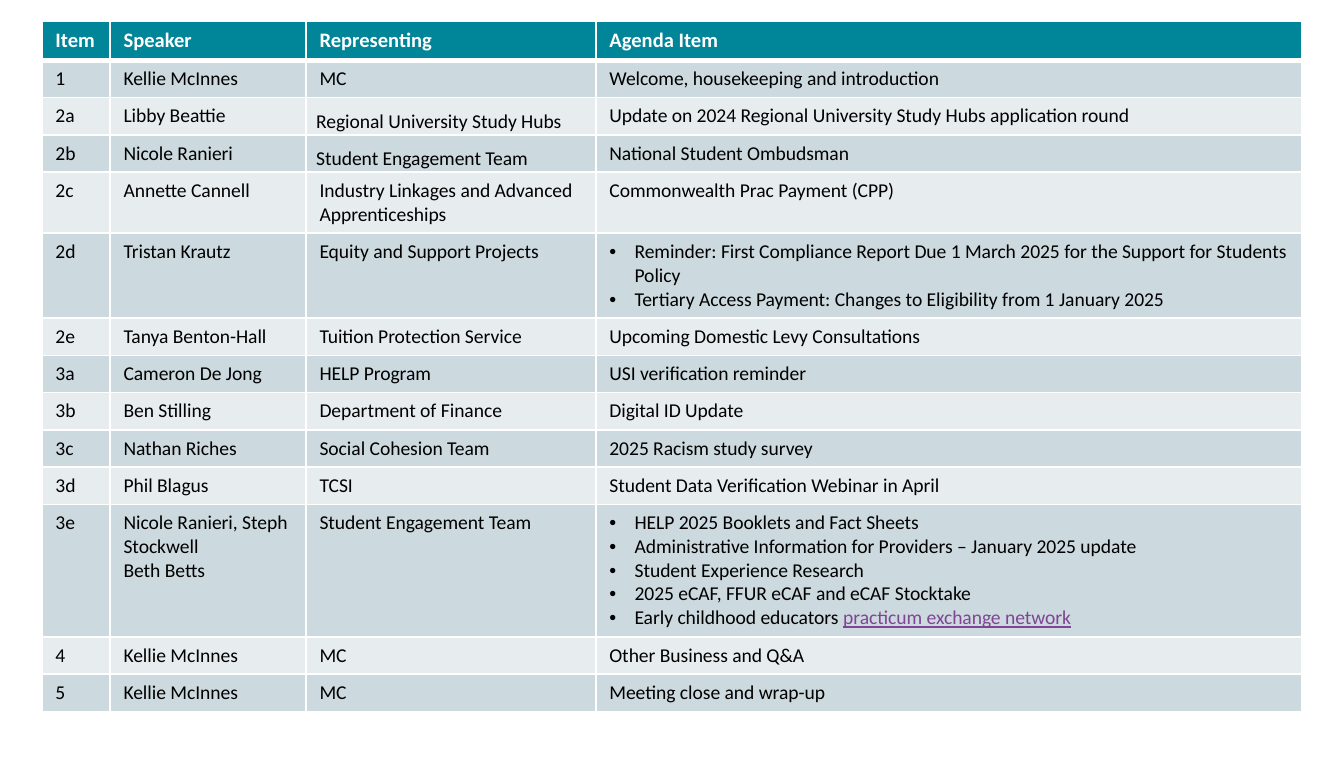
from lxml import etree
from pptx import Presentation
from pptx.dml.color import RGBColor
from pptx.oxml import ns
from pptx.util import Pt

COLORS = {"header": "008599", "dark": "CCD9DE", "light": "E7EDEF",
          "white": "FFFFFF", "black": "000000", "link": "7F4594"}
COLUMN_WIDTHS = [36.5, 105, 155.3, 378]
INDENT = 13.5
LINE_HEIGHT = 12.75
CELL_PADDING = 7.2
HEADER_FORMAT = {"name": "Calibri", "size": Pt(11), "bold": True}
BODY_FORMAT = {"name": "Calibri", "size": Pt(10.5), "bold": False}
LOOSE_MARGINS = {"margin_left": Pt(5.4), "margin_right": Pt(5.4),
                 "margin_top": Pt(0), "margin_bottom": Pt(0)}
LOOSE_ITEMS = ("2a", "2b")
LINE_COUNTS = {"2c": 2, "2d": 3, "3e": 5}
LINK_TEXT = "practicum exchange network"

HEADINGS = ["Item", "Speaker", "Representing", "Agenda Item"]
AGENDA = [
    ["1", "Kellie McInnes", "MC", "Welcome, housekeeping and introduction"],
    ["2a", "Libby Beattie", "Regional University Study Hubs",
     "Update on 2024 Regional University Study Hubs application round"],
    ["2b", "Nicole Ranieri", "Student Engagement Team", "National Student Ombudsman"],
    ["2c", "Annette Cannell", "Industry Linkages and Advanced Apprenticeships",
     "Commonwealth Prac Payment (CPP)"],
    ["2d", "Tristan Krautz", "Equity and Support Projects", [
        "Reminder: First Compliance Report Due 1 March 2025 for the Support for Students Policy",
        "Tertiary Access Payment: Changes to Eligibility from 1 January 2025"]],
    ["2e", "Tanya Benton-Hall", "Tuition Protection Service",
     "Upcoming Domestic Levy Consultations"],
    ["3a", "Cameron De Jong", "HELP Program", "USI verification reminder"],
    ["3b", "Ben Stilling", "Department of Finance", "Digital ID Update"],
    ["3c", "Nathan Riches", "Social Cohesion Team", "2025 Racism study survey"],
    ["3d", "Phil Blagus", "TCSI", "Student Data Verification Webinar in April"],
    ["3e", "Nicole Ranieri, Steph Stockwell\nBeth Betts", "Student Engagement Team", [
        "HELP 2025 Booklets and Fact Sheets",
        "Administrative Information for Providers – January 2025 update",
        "Student Experience Research",
        "2025 eCAF, FFUR eCAF and eCAF Stocktake",
        "Early childhood educators " + LINK_TEXT]],
    ["4", "Kellie McInnes", "MC", "Other Business and Q&A"],
    ["5", "Kellie McInnes", "MC", "Meeting close and wrap-up"],
]


def color(name):
    return RGBColor.from_string(COLORS[name])


def apply_format(target, values):
    for name, value in values.items():
        setattr(target, name, value)


def add_borders(cell, bottom_width):
    properties = cell._tc.get_or_add_tcPr()
    widths = {"lnL": 1, "lnR": 1, "lnT": 1, "lnB": bottom_width}
    for side, width in widths.items():
        line = etree.SubElement(properties, ns.qn("a:" + side), w=str(Pt(width)))
        fill = etree.SubElement(line, ns.qn("a:solidFill"))
        etree.SubElement(fill, ns.qn("a:srgbClr"), val=COLORS["white"])


def add_bullet(paragraph):
    properties = paragraph._p.get_or_add_pPr()
    properties.set("marL", str(Pt(INDENT)))
    properties.set("indent", str(-Pt(INDENT)))
    etree.SubElement(properties, ns.qn("a:buFont"), typeface="Arial")
    etree.SubElement(properties, ns.qn("a:buChar"), char="•")


def add_run(paragraph, words, font_format, color_name):
    run = paragraph.add_run()
    run.text = words
    apply_format(run.font, font_format)
    run.font.color.rgb = color(color_name)


def fill_cell(cell, content, fill_name, font_format, color_name):
    bulleted = isinstance(content, list)
    lines = content if bulleted else content.split("\n")
    frame = cell.text_frame
    for index, line in enumerate(lines):
        paragraph = frame.add_paragraph() if index else frame.paragraphs[0]
        if bulleted:
            add_bullet(paragraph)
        plain, link, _ = line.partition(LINK_TEXT)
        add_run(paragraph, plain, font_format, color_name)
        if link:
            add_run(paragraph, link, {**font_format, "underline": True}, "link")
    add_borders(cell, 3 if fill_name == "header" else 1)
    cell.fill.solid()
    cell.fill.fore_color.rgb = color(fill_name)


def add_agenda(slide, left, top):
    rows = [HEADINGS] + AGENDA
    heights = [CELL_PADDING + LINE_HEIGHT * LINE_COUNTS.get(row[0], 1) for row in rows]
    table = slide.shapes.add_table(
        len(rows), len(COLUMN_WIDTHS), Pt(left), Pt(top),
        Pt(sum(COLUMN_WIDTHS)), Pt(sum(heights))).table
    for column, width in zip(table.columns, COLUMN_WIDTHS):
        column.width = Pt(width)
    for index, (row, height) in enumerate(zip(rows, heights)):
        table.rows[index].height = Pt(height)
        if index == 0:
            style = ("header", HEADER_FORMAT, "white")
        else:
            style = ("dark" if index % 2 else "light", BODY_FORMAT, "black")
        for position, content in enumerate(row):
            fill_cell(table.cell(index, position), content, *style)
        if row[0] in LOOSE_ITEMS:
            team = table.cell(index, HEADINGS.index("Representing"))
            apply_format(team, LOOSE_MARGINS)
            team.text_frame.paragraphs[0].line_spacing = 1.5


def main():
    presentation = Presentation()
    presentation.slide_width = Pt(720)
    presentation.slide_height = Pt(405.36)
    slide = presentation.slides.add_slide(presentation.slide_layouts[6])
    add_agenda(slide, 22.5, 11.5)
    presentation.save("out.pptx")


if __name__ == "__main__":
    main()
